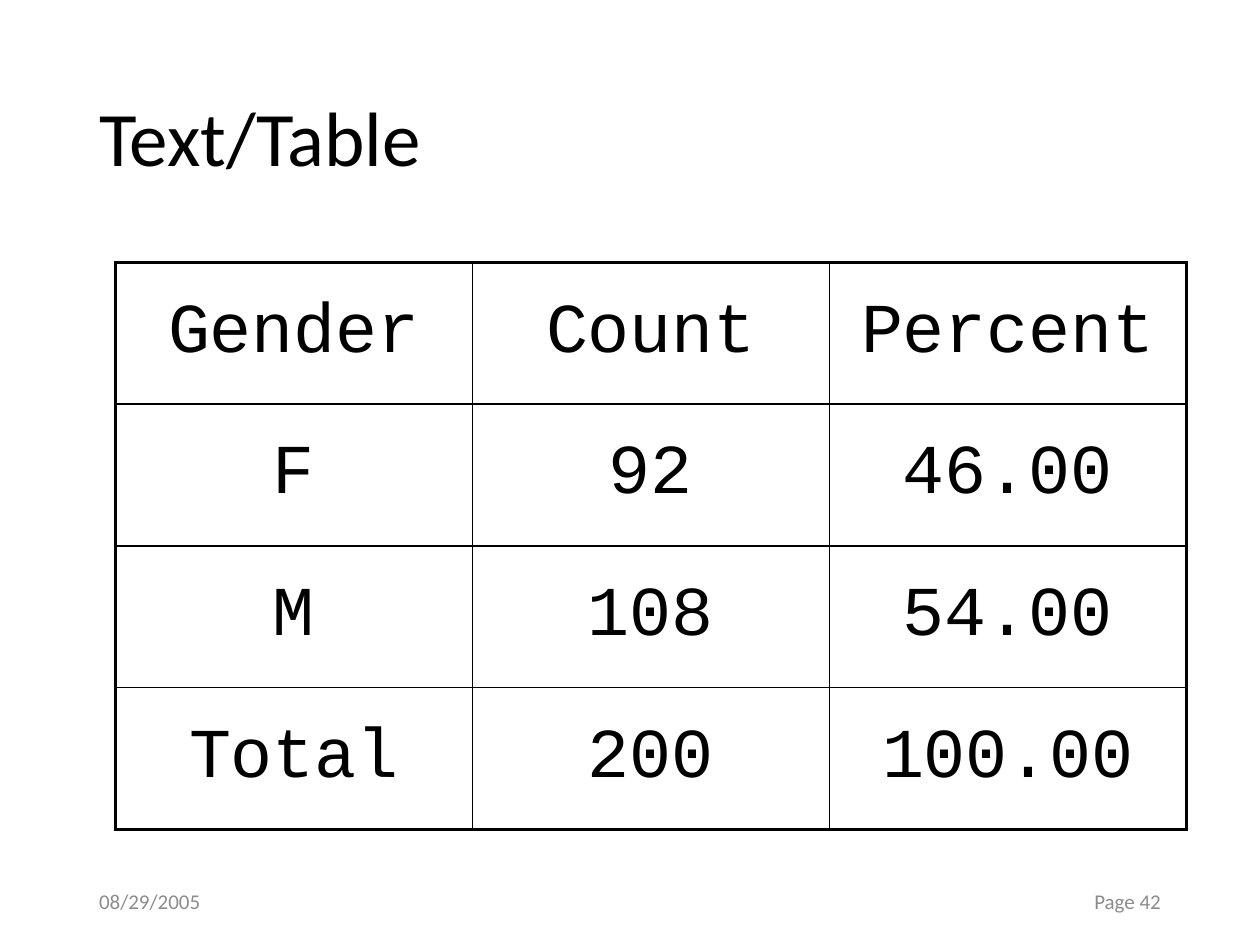
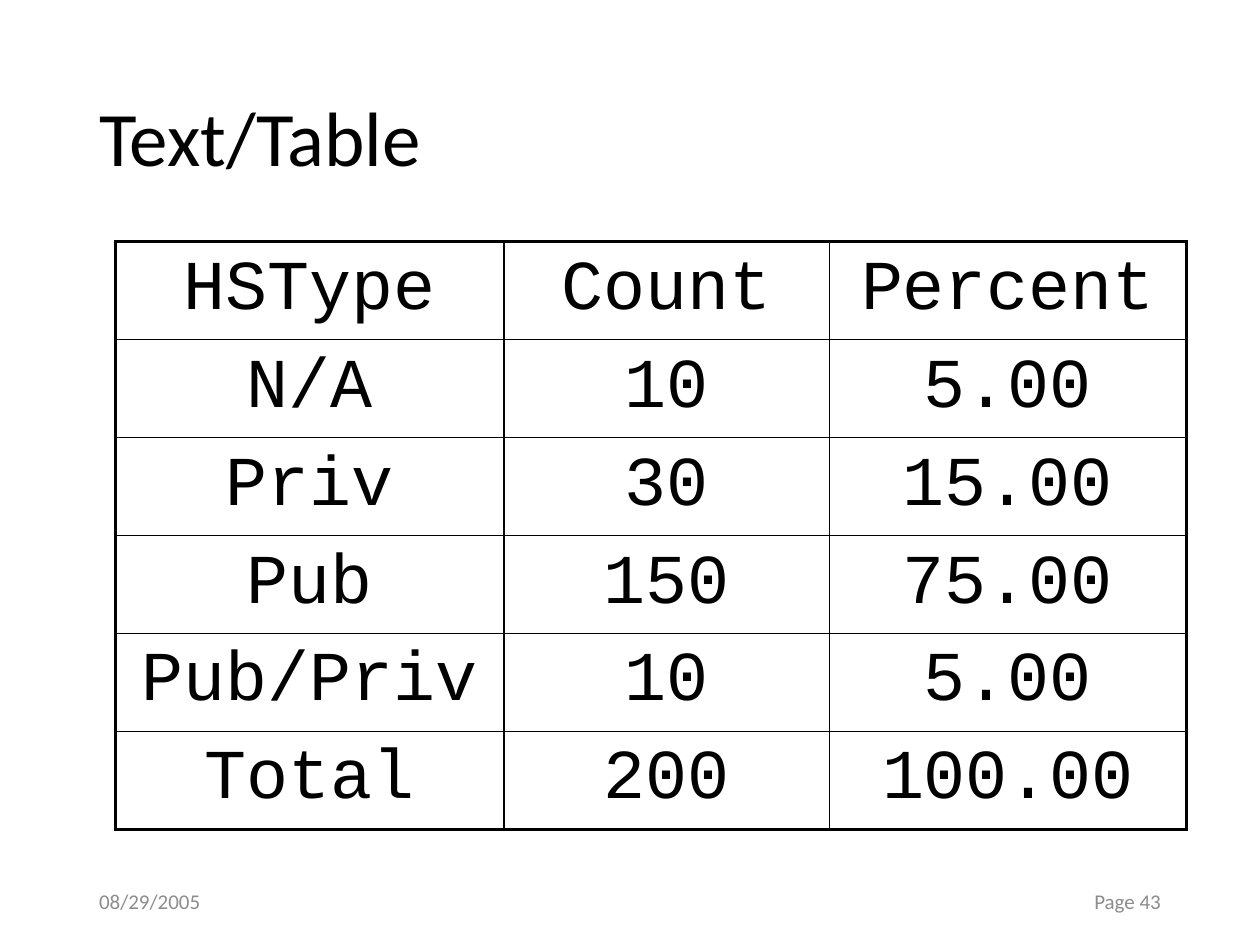
from lxml import etree
from pptx import Presentation
from pptx.dml.color import RGBColor
from pptx.enum.text import MSO_ANCHOR, MSO_AUTO_SIZE, PP_ALIGN
from pptx.oxml.ns import qn
from pptx.util import Inches, Pt

LEFT, CENTER, RIGHT = PP_ALIGN.LEFT, PP_ALIGN.CENTER, PP_ALIGN.RIGHT
MIDDLE = MSO_ANCHOR.MIDDLE
NO_AUTOFIT = MSO_AUTO_SIZE.NONE

COLORS = {"text": "000000", "footer": "8C8C8C", "border": "000000", "page": "FFFFFF"}
BODY_FONT = "Calibri"
TABLE_FONT = "Courier New"
TITLE_ONLY_LAYOUT = 5
SLIDE_WIDTH, SLIDE_HEIGHT = Inches(10), Inches(7.5)
GRID_COLUMNS, GRID_ROWS = 120, 90
THIN, THICK = Pt(1), Pt(2.25)

TABLE_LEFT = 11
TITLE_BOX = (8.25, 4.8, 103.5, 17.4)
DATE_BOX = (8.25, 83.4, 27, 4.8)
PAGE_BOX = (84.75, 83.4, 27, 4.8)

SLIDES = [
    {
        "page": 42,
        "top": 25,
        "height": 54,
        "columns": [34, 34, 34],
        "rows": [
            ["Gender", "Count", "Percent"],
            ["F", "92", "46.00"],
            ["M", "108", "54.00"],
            ["Total", "200", "100.00"],
        ],
    },
    {
        "page": 43,
        "top": 23,
        "height": 56,
        "columns": [37, 31, 34],
        "rows": [
            ["HSType", "Count", "Percent"],
            ["N/A", "10", "5.00"],
            ["Priv", "30", "15.00"],
            ["Pub", "150", "75.00"],
            ["Pub/Priv", "10", "5.00"],
            ["Total", "200", "100.00"],
        ],
    },
]


def across(columns):
    return round(SLIDE_WIDTH * columns / GRID_COLUMNS)


def down(rows):
    return round(SLIDE_HEIGHT * rows / GRID_ROWS)


def write(text_frame, text, size, font=BODY_FONT, color="text", align=LEFT,
          line_spacing=None, space_before_percent=None):
    text_frame.text = text
    paragraph = text_frame.paragraphs[0]
    paragraph.alignment = align
    if line_spacing:
        paragraph.line_spacing = line_spacing
    if space_before_percent:
        properties = paragraph._p.get_or_add_pPr()
        space_before = etree.SubElement(properties, qn("a:spcBef"))
        percent = etree.SubElement(space_before, qn("a:spcPct"))
        percent.set("val", str(space_before_percent * 1000))
    run_font = paragraph.runs[0].font
    run_font.name = font
    run_font.size = Pt(size)
    run_font.bold = False
    run_font.color.rgb = RGBColor.from_string(COLORS[color])


def set_borders(cell, widths):
    properties = cell._tc.get_or_add_tcPr()
    for position, (side, width) in enumerate(widths.items()):
        line = etree.Element(qn(f"a:ln{side}"), w=str(width))
        fill = etree.SubElement(line, qn("a:solidFill"))
        etree.SubElement(fill, qn("a:srgbClr"), val=COLORS["border"])
        properties.insert(position, line)


class Deck:
    def __init__(self):
        self.presentation = Presentation()
        self.presentation.slide_width = SLIDE_WIDTH
        self.presentation.slide_height = SLIDE_HEIGHT
        self.slide = None

    def add_slide(self):
        layout = self.presentation.slide_layouts[TITLE_ONLY_LAYOUT]
        self.slide = self.presentation.slides.add_slide(layout)
        background = self.slide.background.fill
        background.solid()
        background.fore_color.rgb = RGBColor.from_string(COLORS["page"])

    def place(self, shape, box):
        left, top, width, height = box
        shape.left, shape.top = across(left), down(top)
        shape.width, shape.height = across(width), down(height)
        text_frame = shape.text_frame
        text_frame.word_wrap = True
        text_frame.auto_size = NO_AUTOFIT
        text_frame.vertical_anchor = MIDDLE
        return text_frame

    def title(self, text):
        text_frame = self.place(self.slide.shapes.title, TITLE_BOX)
        write(text_frame, text, 44, line_spacing=0.9)

    def footer(self, text, box, align=LEFT):
        shape = self.slide.shapes.add_textbox(0, 0, 0, 0)
        write(self.place(shape, box), text, 12, color="footer", align=align)

    def table(self, rows, columns, top, height):
        last_row, last_column = len(rows) - 1, len(columns) - 1
        table = self.slide.shapes.add_table(
            len(rows), len(columns), across(TABLE_LEFT), down(top),
            across(sum(columns)), down(height)).table
        table.first_row = False
        table.horz_banding = False
        for column, width in zip(table.columns, columns):
            column.width = across(width)
        for row_index, values in enumerate(rows):
            table.rows[row_index].height = down(height / len(rows))
            for column_index, value in enumerate(values):
                cell = table.cell(row_index, column_index)
                cell.vertical_anchor = MIDDLE
                cell.fill.background()
                write(cell.text_frame, value, 40, font=TABLE_FONT,
                      align=CENTER, space_before_percent=20)
                set_borders(cell, {
                    "L": THICK if column_index == 0 else THIN,
                    "R": THICK if column_index == last_column else THIN,
                    "T": THICK if row_index == 0 else THIN,
                    "B": THICK if row_index == last_row else THIN,
                })


def main():
    deck = Deck()
    for content in SLIDES:
        deck.add_slide()
        deck.footer("08/29/2005", DATE_BOX)
        deck.footer(f"Page {content['page']}", PAGE_BOX, align=RIGHT)
        deck.title("Text/Table")
        deck.table(content["rows"], content["columns"], content["top"], content["height"])
    deck.presentation.save("out.pptx")


if __name__ == "__main__":
    main()
